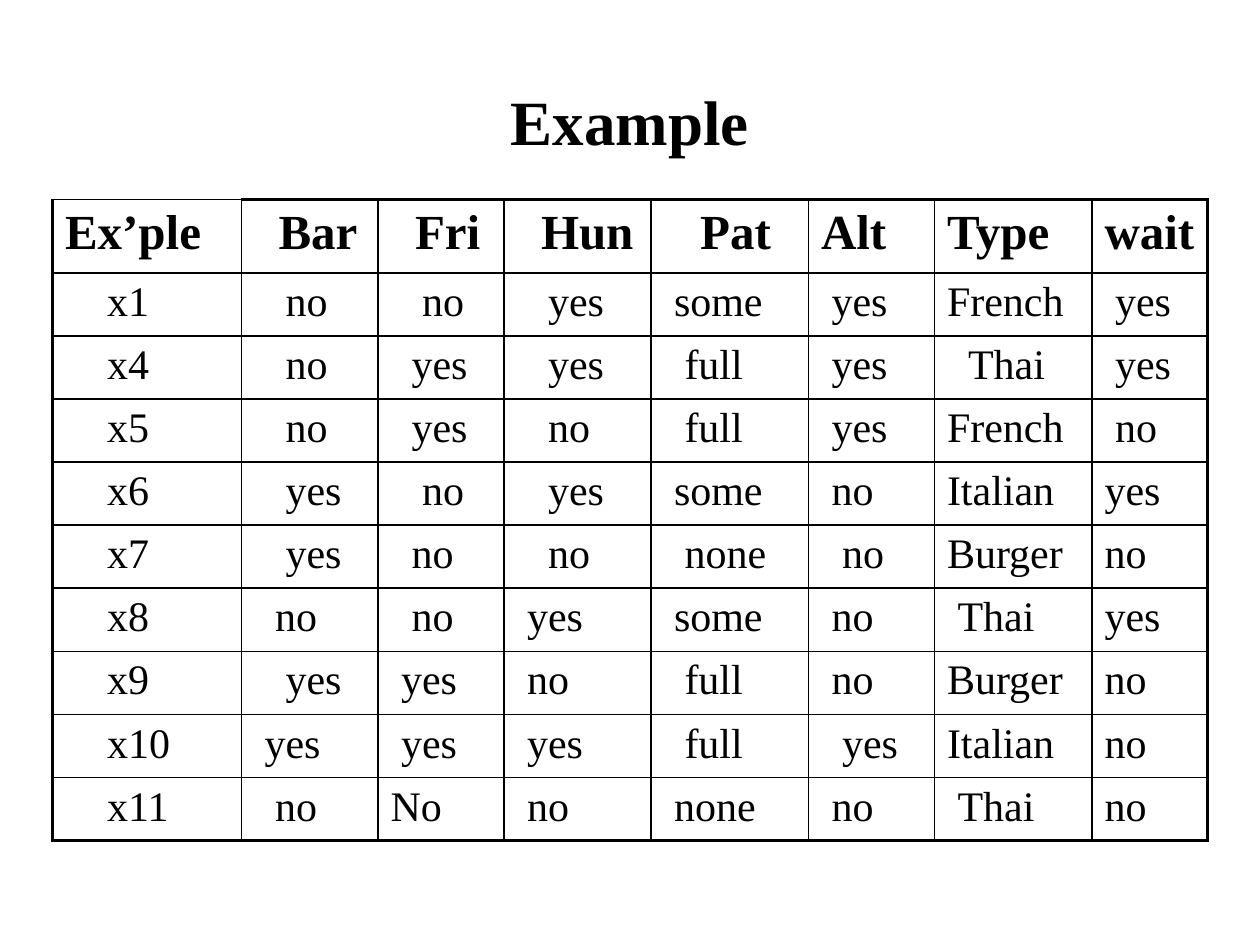
from typing import NamedTuple

from lxml import etree
from pptx import Presentation
from pptx.dml.color import RGBColor
from pptx.enum.text import MSO_ANCHOR, PP_ALIGN
from pptx.oxml.ns import qn
from pptx.util import Pt

MIDDLE = MSO_ANCHOR.MIDDLE
LEFT, CENTER = PP_ALIGN.LEFT, PP_ALIGN.CENTER

FONT = "Times New Roman"
BLACK = "000000"
THIN, THICK = 1, 2.25
HEADER_SIZE, BODY_SIZE = 28, 24
CELL_MARGIN = 7.2
INDENT_STEP = 0.25  # share of the font size
COLUMN_WIDTHS = [108, 78, 72, 84, 90, 72, 90, 66]
ROW_HEIGHTS = [42] + [36] * 4 + [30] + [36] * 4


class Record(NamedTuple):
    values: str
    indents: str  # one digit of indent steps per column


RECORDS = [
    Record("Ex’ple Bar Fri Hun Pat Alt Type wait", "02223000"),
    Record("x1 no no yes some yes French yes", "43331101"),
    Record("x4 no yes yes full yes Thai yes", "43232121"),
    Record("x5 no yes no full yes French no", "43232101"),
    Record("x6 yes no yes some no Italian yes", "43331100"),
    Record("x7 yes no no none no Burger no", "43232200"),
    Record("x8 no no yes some no Thai yes", "42211110"),
    Record("x9 yes yes no full no Burger no", "43112100"),
    Record("x10 yes yes yes full yes Italian no", "41112200"),
    Record("x11 no No no none no Thai no", "42011110"),
]


def color(code: str) -> RGBColor:
    return RGBColor.from_string(code)


def write(frame, text: str, *, size: float, bold: bool = False, align=LEFT) -> None:
    para = frame.paragraphs[0]
    para.alignment = align
    span = para.add_run()
    span.text = text
    span.font.name = FONT
    span.font.size = Pt(size)
    span.font.bold = bold
    span.font.color.rgb = color(BLACK)


def add_borders(cell, widths: dict[str, float]) -> None:
    properties = cell._tc.get_or_add_tcPr()
    for side, width in widths.items():
        line = etree.SubElement(properties, qn(f"a:ln{side}"), w=str(Pt(width)))
        fill = etree.SubElement(line, qn("a:solidFill"))
        etree.SubElement(fill, qn("a:srgbClr"), val=BLACK)


def add_title(page, text: str) -> None:
    box = page.shapes.add_textbox(Pt(54), Pt(24), Pt(612), Pt(90))
    box.text_frame.word_wrap = True
    box.text_frame.vertical_anchor = MIDDLE
    write(box.text_frame, text, size=36, bold=True, align=CENTER)


def add_records(page, records: list[Record]) -> None:
    last_row, last_column = len(records) - 1, len(COLUMN_WIDTHS) - 1
    table = page.shapes.add_table(
        len(records), len(COLUMN_WIDTHS), Pt(30), Pt(114),
        Pt(sum(COLUMN_WIDTHS)), Pt(sum(ROW_HEIGHTS))).table
    table.first_row = table.horz_banding = False
    for column, width in zip(table.columns, COLUMN_WIDTHS):
        column.width = Pt(width)
    for row, height in zip(table.rows, ROW_HEIGHTS):
        row.height = Pt(height)

    for r, record in enumerate(records):
        size = BODY_SIZE if r else HEADER_SIZE
        for c, (text, steps) in enumerate(zip(record.values.split(), record.indents)):
            cell = table.cell(r, c)
            cell.margin_left = Pt(CELL_MARGIN + int(steps) * size * INDENT_STEP)
            # Thick outer frame, except above the first heading
            add_borders(cell, {
                "L": THICK if c == 0 else THIN,
                "R": THICK if c == last_column else THIN,
                "T": THICK if r == 0 and c > 0 else THIN,
                "B": THICK if r == last_row else THIN,
            })
            cell.fill.background()
            write(cell.text_frame, text, size=size, bold=r == 0)


def main() -> None:
    deck = Presentation()
    deck.slide_width, deck.slide_height = Pt(720), Pt(540)
    page = deck.slides.add_slide(deck.slide_layouts[6])
    add_title(page, "Example")
    add_records(page, RECORDS)
    deck.save("out.pptx")


if __name__ == "__main__":
    main()
